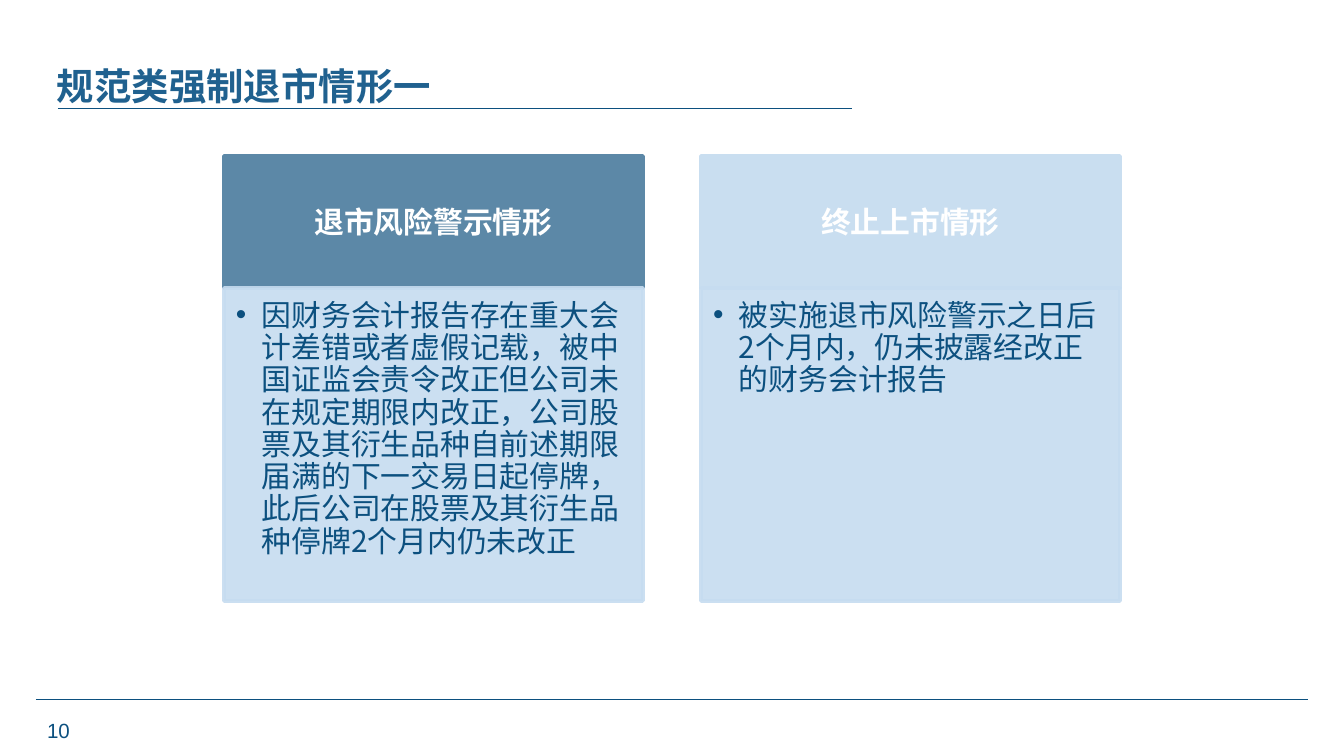
from lxml import etree
from pptx import Presentation
from pptx.dml.color import RGBColor
from pptx.enum.shapes import MSO_CONNECTOR, MSO_SHAPE
from pptx.enum.text import MSO_ANCHOR, PP_ALIGN
from pptx.oxml.ns import qn
from pptx.util import Pt

PX = 914400 / 134.4
NAVY = RGBColor(0x0C, 0x50, 0x7F)
TITLE_BLUE = RGBColor(0x20, 0x61, 0x8F)
STEEL = RGBColor(0x5C, 0x88, 0xA7)
PALE = RGBColor(0xC9, 0xDE, 0xF0)
PANEL = RGBColor(0xC6, 0xDC, 0xF0)
WHITE = RGBColor(0xFF, 0xFF, 0xFF)
RECT, STRAIGHT = MSO_SHAPE.RECTANGLE, MSO_CONNECTOR.STRAIGHT
TOP, MIDDLE = MSO_ANCHOR.TOP, MSO_ANCHOR.MIDDLE
LEFT, CENTER = PP_ALIGN.LEFT, PP_ALIGN.CENTER
CJK = "Noto Sans CJK SC"

TITLE = {"name": CJK, "size": Pt(20), "bold": True}
HEADING = {"name": CJK, "size": Pt(16), "bold": True}
BODY = {"name": CJK, "size": Pt(16), "bold": False}
NUMBER = {"name": "Arial", "size": Pt(11), "bold": False}

CARDS = [
    ("退市风险警示情形", STEEL,
     "因财务会计报告存在重大会计差错或者虚假记载，被中国证监会责令改正但公司未在规定期限内改正，"
     "公司股票及其衍生品种自前述期限届满的下一交易日起停牌，此后公司在股票及其衍生品种停牌2个月内仍未改正"),
    ("终止上市情形", PALE,
     "被实施退市风险警示之日后2个月内，仍未披露经改正的财务会计报告"),
]


def emu(*lengths):
    """Turn px lengths into EMU."""
    return [round(n * PX) for n in lengths]


def write(sp, text, style, color, align=LEFT, anchor=TOP,
          insets=(13, 7, 13, 7), spacing=None, bullet=False):
    """Write one formatted paragraph into a shape."""
    tf = sp.text_frame
    tf.word_wrap = True
    tf.vertical_anchor = anchor
    sides = ("margin_left", "margin_top", "margin_right", "margin_bottom")
    for side, value in zip(sides, emu(*insets)):
        setattr(tf, side, value)
    p = tf.paragraphs[0]
    p.alignment = align
    p.line_spacing = spacing
    if bullet:
        indent, = emu(26)
        pPr = p._p.get_or_add_pPr()
        pPr.set("marL", str(indent))
        pPr.set("indent", str(-indent))
        etree.SubElement(pPr, qn("a:buFont")).set("typeface", "Arial")
        etree.SubElement(pPr, qn("a:buChar")).set("char", "•")
    r = p.add_run()
    r.text = text
    for key, value in style.items():
        setattr(r.font, key, value)
    r.font.color.rgb = color
    ea = etree.SubElement(r._r.get_or_add_rPr(), qn("a:ea"))
    ea.set("typeface", style["name"])


def add_rule(s, x1, x2, y):
    """Draw a thin horizontal line."""
    line = s.shapes.add_connector(STRAIGHT, *emu(x1, y, x2, y))
    line.line.color.rgb = NAVY
    line.line.width = Pt(0.5)
    etree.SubElement(line._element.spPr, qn("a:effectLst"))


def add_block(s, box, color, opacity=100):
    """Draw a filled rectangle with a matching outline."""
    sp = s.shapes.add_shape(RECT, *emu(*box))
    sp.shadow.inherit = False
    sp.fill.solid()
    sp.fill.fore_color.rgb = color
    sp.line.color.rgb = color
    sp.line.width = Pt(2)
    if opacity < 100:
        for clr in sp._element.spPr.iter(qn("a:srgbClr")):
            etree.SubElement(clr, qn("a:alpha")).set("val", str(opacity * 1000))
    return sp


def add_title(s, x, y, w, h):
    """Place the slide title and its underline."""
    tb = s.shapes.add_textbox(*emu(x, y, w, h))
    write(tb, "规范类强制退市情形一", TITLE, TITLE_BLUE, spacing=Pt(25))
    add_rule(s, x + 14, x + w - 49, y + h - 5)


def add_card(s, x, y, w, h, heading, color, body):
    """Place a heading block above its bulleted panel."""
    head_h = 132
    head = add_block(s, (x, y, w, head_h), color)
    write(head, heading, HEADING, WHITE, CENTER, MIDDLE, (16, 9, 16, 9), Pt(19))
    panel = add_block(s, (x, y + head_h, w, h - head_h), PANEL, 90)
    write(panel, body, BODY, NAVY, insets=(12, 12, 16, 19),
          spacing=Pt(17.3), bullet=True)


def add_cards(s, x, y, w, h):
    """Spread the cards evenly over the given box."""
    gap = 58
    card_w = (w - gap * (len(CARDS) - 1)) // len(CARDS)
    for i, card in enumerate(CARDS):
        add_card(s, x + i * (card_w + gap), y, card_w, h, *card)


def add_footer(s, x, y, w, h):
    """Place the footer line and the page number."""
    add_rule(s, x, x + w, y)
    tb = s.shapes.add_textbox(*emu(x - 9, y + 11, 63, h - 11))
    write(tb, "10", NUMBER, NAVY, CENTER)


def main():
    """Build and save the slide."""
    prs = Presentation()
    prs.slide_width, prs.slide_height = emu(1344, 756)
    s = prs.slides.add_slide(prs.slide_layouts[6])
    add_footer(s, 36, 700, 1272, 43)
    add_title(s, 44, 54, 857, 59)
    add_cards(s, 224, 156, 896, 445)
    prs.save("out.pptx")


if __name__ == "__main__":
    main()
